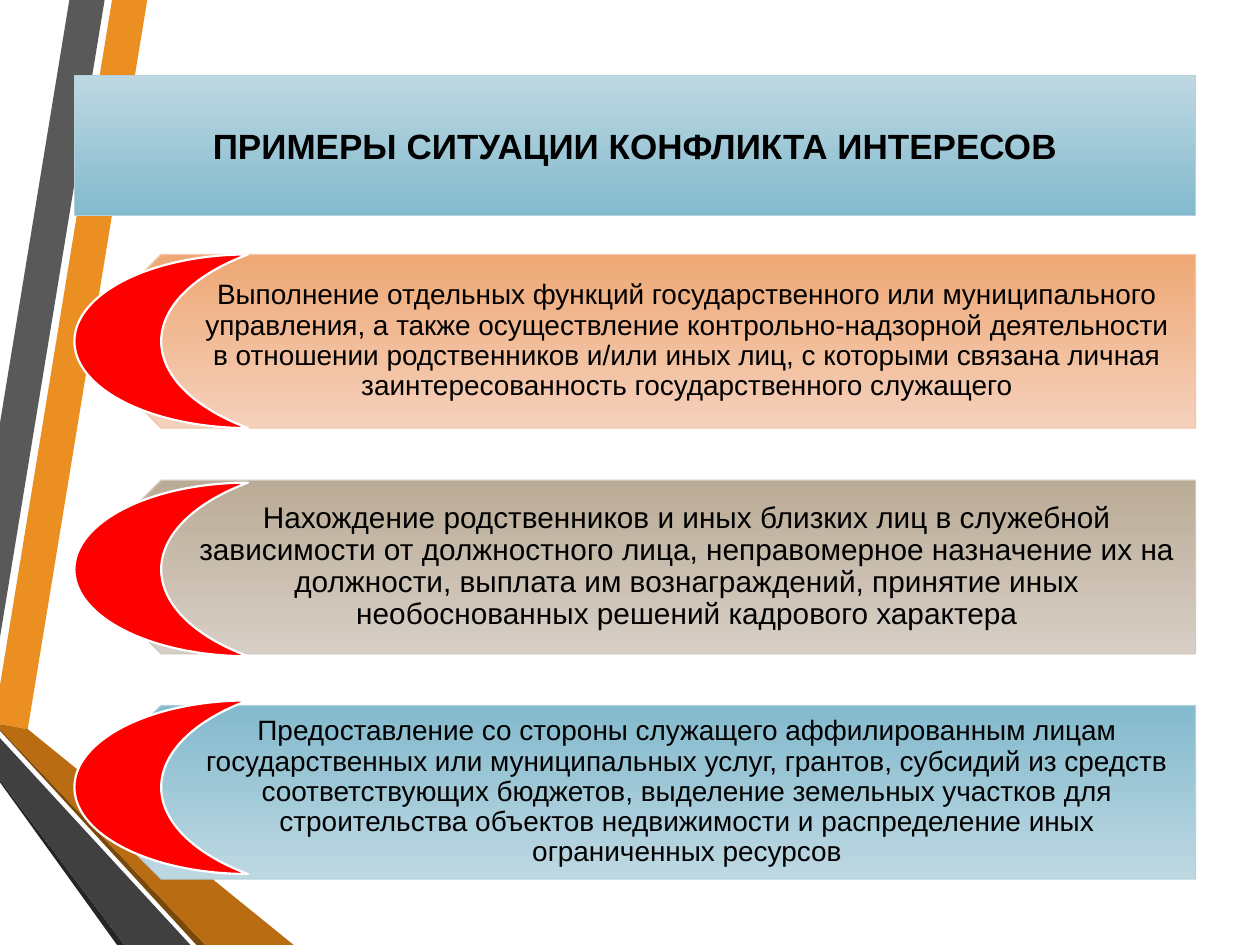
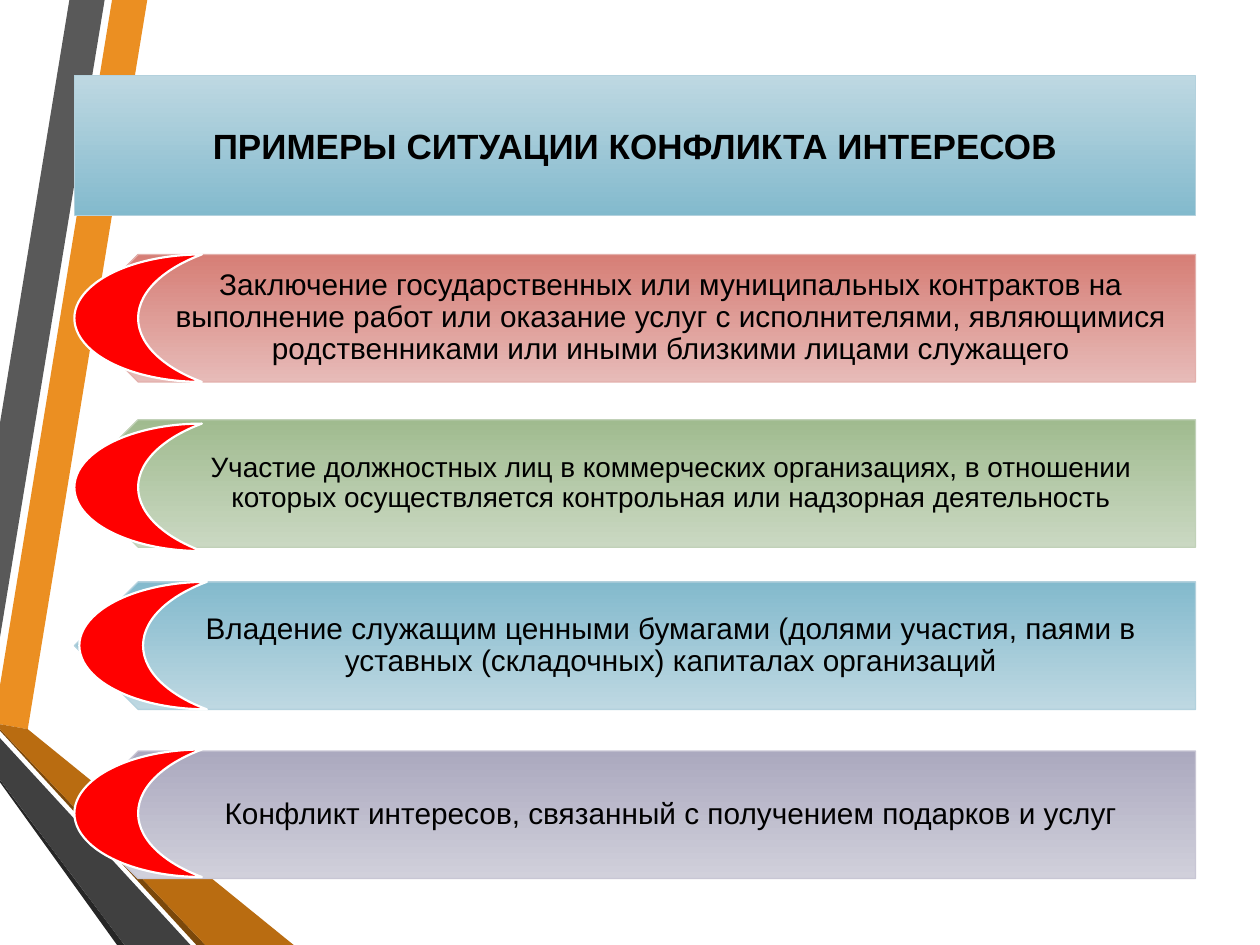
from pptx import Presentation
from pptx.dml.color import RGBColor
from pptx.enum.shapes import MSO_SHAPE
from pptx.enum.text import MSO_ANCHOR, MSO_AUTO_SIZE, PP_ALIGN
from pptx.util import Cm, Pt

PENTAGON, MOON = MSO_SHAPE.PENTAGON, MSO_SHAPE.MOON
TITLE_ONLY = 5
FONT = "Arial"
BLACK, WHITE, RED = "000000", "FFFFFF", "FF0000"
BLUE = ("BED8E2", "83BACD", "B3D1DD")
ORANGE = ("F5D0BB", "EEA875", "F3C6AC")
SAND = ("D7CFC6", "BAAB96", "D1C8BC")
ROSE = ("E7BBB8", "D67E76", "E3B0AC")
GREEN = ("CAD8C2", "A0BB8F", "C1D1B8")
LILAC = ("D1D0DB", "ABA9BF", "C8C6D4")

LEFT, WIDTH = 1.5, 22.6
TITLE = "ПРИМЕРЫ СИТУАЦИИ КОНФЛИКТА ИНТЕРЕСОВ"
TITLE_BOX = (LEFT, 1.52, WIDTH, 2.82)
FRAME_FORMAT = {"word_wrap": True, "auto_size": MSO_AUTO_SIZE.NONE,
                "vertical_anchor": MSO_ANCHOR.MIDDLE}

RIBBONS = [
    ("EB8F22", [(0, 13.82), (0, 14.6), (0.56, 14.7), (2.97, 0), (2.26, 0)]),
    ("595959", [(2.11, 0), (1.4, 0), (0, 8.53), (0, 12.85)]),
    ("262626", [(0, 15.72), (0, 15.77), (2.36, 19.05), (2.51, 19.05)]),
    ("7B480B", [(0, 14.7), (0, 14.73), (3.96, 19.05), (4.14, 19.05)]),
    ("B96C11", [(0, 14.7), (4.14, 19.05), (5.92, 19.05), (0.56, 14.7), (0, 14.6)]),
    ("404040", [(0, 15.72), (2.51, 19.05), (3.84, 19.05), (0, 14.88)]),
]

# Each situation: top, moon shift (x, y), palette, text size, wording
SLIDES = [
    (3.5, [
        (5.13, (0, 0), ORANGE, 16,
         "Выполнение отдельных функций государственного или муниципального управления, "
         "а также осуществление контрольно-надзорной деятельности в отношении "
         "родственников и/или иных лиц, с которыми связана личная заинтересованность "
         "государственного служащего"),
        (9.68, (0, 0.05), SAND, 17,
         "Нахождение родственников и иных близких лиц в служебной зависимости от "
         "должностного лица, неправомерное назначение их на должности, выплата им "
         "вознаграждений, принятие иных необоснованных решений кадрового характера"),
        (14.22, (0, -0.1), BLUE, 16,
         "Предоставление со стороны служащего аффилированным лицам государственных или "
         "муниципальных услуг, грантов, субсидий из средств соответствующих бюджетов, "
         "выделение земельных участков для строительства объектов недвижимости и "
         "распределение иных ограниченных ресурсов"),
    ]),
    (2.57, [
        (5.13, (0, 0), ROSE, 17,
         "Заключение государственных или муниципальных контрактов на выполнение работ "
         "или оказание услуг с исполнителями, являющимися родственниками или иными "
         "близкими лицами служащего"),
        (8.46, (0, 0.08), GREEN, 16,
         "Участие должностных лиц в коммерческих организациях, в отношении которых "
         "осуществляется контрольная или надзорная деятельность"),
        (11.73, (0.1, 0), BLUE, 17,
         "Владение служащим ценными бумагами (долями участия, паями в уставных "
         "(складочных) капиталах организаций"),
        (15.14, (0, -0.03), LILAC, 17,
         "Конфликт интересов, связанный с получением подарков и услуг"),
    ]),
]


def rgb(value):
    """Turn a hex string into a colour."""
    return RGBColor.from_string(value)


def set_all(target, values):
    """Set every attribute named in values on the target."""
    for name, value in values.items():
        setattr(target, name, value)


def outline(shape, color, width):
    """Draw the outline of a shape in one colour."""
    shape.line.color.rgb = rgb(color)
    shape.line.width = Pt(width)


def paint_gradient(shape, palette):
    """Fill a shape from light to dark downwards and outline it."""
    light, dark, edge = palette
    shape.fill.gradient()
    shape.fill.gradient_angle = 270
    for stop, color in zip(shape.fill.gradient_stops, (light, dark)):
        stop.color.rgb = rgb(color)
    outline(shape, edge, 0.75)


def write(shape, text, size, bold=False, spacing=1.0, margins=(0.25, 0.13, 0.25, 0.13)):
    """Put one centred paragraph into a shape."""
    frame = shape.text_frame
    sides = ("margin_left", "margin_top", "margin_right", "margin_bottom")
    set_all(frame, FRAME_FORMAT | dict(zip(sides, map(Cm, margins))))
    paragraph = frame.paragraphs[0]
    set_all(paragraph, {"alignment": PP_ALIGN.CENTER, "line_spacing": spacing})
    run = paragraph.add_run()
    run.text = text
    set_all(run.font, {"name": FONT, "size": Pt(size), "bold": bold})
    run.font.color.rgb = rgb(BLACK)


def add_ribbons(slide):
    """Build the folded ribbons and hand them to the shared layout."""
    for color, corners in RIBBONS:
        start, *rest = [(Cm(x), Cm(y)) for x, y in corners]
        builder = slide.shapes.build_freeform(*start)
        builder.add_line_segments(rest)
        ribbon = builder.convert_to_shape()
        ribbon.shadow.inherit = False
        ribbon.fill.solid()
        ribbon.fill.fore_color.rgb = rgb(color)
        ribbon.line.fill.background()
        slide.slide_layout.shapes.element.append(ribbon.element)


def add_title(slide, box):
    """Place the heading on its gradient panel."""
    title = slide.shapes.title
    set_all(title, dict(zip(("left", "top", "width", "height"), map(Cm, box))))
    paint_gradient(title, BLUE)
    write(title, TITLE, 20, bold=True)


def add_situation(slide, box, moon_shift, palette, size, text):
    """Place one pointed band with its wording and red moon."""
    left, top, width, height = box
    band = slide.shapes.add_shape(PENTAGON, *map(Cm, box))
    band.rotation = 180
    band.shadow.inherit = False
    paint_gradient(band, palette)

    indent = height / 4
    wording = slide.shapes.add_textbox(
        *map(Cm, (left + indent, top, width - indent, height)))
    write(wording, text, size, spacing=0.9, margins=(0.44 * height, 0.18, 0.32, 0.18))

    shift_x, shift_y = moon_shift
    moon = slide.shapes.add_shape(
        MOON, *map(Cm, (left + shift_x, top + shift_y, height, height)))
    moon.shadow.inherit = False
    moon.fill.solid()
    moon.fill.fore_color.rgb = rgb(RED)
    outline(moon, WHITE, 1.25)


def add_situations_slide(deck, height, situations):
    """Add a slide with the heading and a stack of situations."""
    slide = deck.slides.add_slide(deck.slide_layouts[TITLE_ONLY])
    add_title(slide, TITLE_BOX)
    for top, *details in situations:
        add_situation(slide, (LEFT, top, WIDTH, height), *details)
    return slide


def main():
    """Build and save the deck."""
    deck = Presentation()
    set_all(deck, {"slide_width": Cm(25.4), "slide_height": Cm(19.05)})
    slides = [add_situations_slide(deck, *content) for content in SLIDES]
    add_ribbons(slides[0])
    deck.save("out.pptx")


if __name__ == "__main__":
    main()
